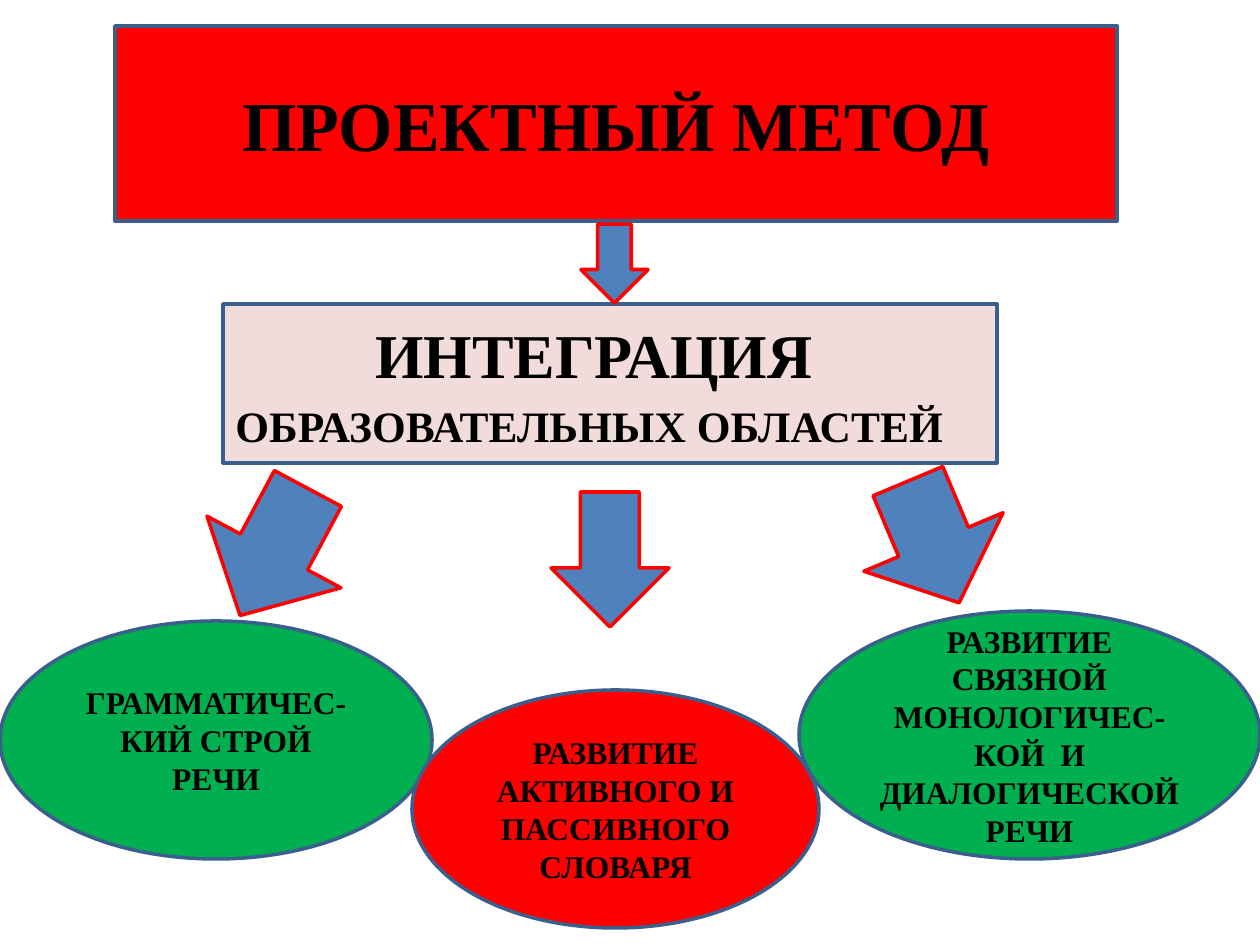
"""Build a slide showing the project method leading to three areas of speech development."""
from dataclasses import dataclass

from pptx import Presentation
from pptx.dml.color import RGBColor
from pptx.enum.shapes import MSO_SHAPE
from pptx.enum.text import MSO_ANCHOR, PP_ALIGN
from pptx.util import Emu, Pt


@dataclass(frozen=True)
class Theme:
    font: str = "Times New Roman"
    text: str = "000000"
    red: str = "FF0000"
    green: str = "00B050"
    pink: str = "F2DCDB"
    blue: str = "4F81BD"
    outline: str = "3A5F8C"
    title: float = 40
    heading: float = 35.6
    subheading: float = 24.8
    label: float = 18
    line: float = 2


T = Theme()
SLIDE = (1260, 945)
EMU_PER_PX = 914400 / 126

TITLE = ("ПРОЕКТНЫЙ МЕТОД", (115, 26, 1002, 195))
INTEGRATION_BOX = (223, 304, 774, 159)
INTEGRATION = [
    ("ИНТЕГРАЦИЯ", T.heading, 140),
    ("ОБРАЗОВАТЕЛЬНЫХ ОБЛАСТЕЙ", T.subheading, 0),
]
ARROWS = [
    ((198, 480, 152, 144), 28.1),
    ((858, 476, 151, 132), 337.2),
    ((581, 224, 67, 79), 0),
    ((551, 492, 118, 135), 0),
]
AREAS = [
    ("ГРАММАТИЧЕС-КИЙ СТРОЙ РЕЧИ", (0, 621, 432, 238), T.green),
    ("РАЗВИТИЕ СВЯЗНОЙ МОНОЛОГИЧЕС-КОЙ  И ДИАЛОГИЧЕСКОЙ РЕЧИ", (799, 611, 461, 248), T.green),
    ("РАЗВИТИЕ АКТИВНОГО И ПАССИВНОГО СЛОВАРЯ", (412, 690, 407, 238), T.red),
]


def px(n):
    return Emu(round(n * EMU_PER_PX))


def add_shape(s, kind, box, fill, line=T.outline):
    sp = s.shapes.add_shape(kind, *map(px, box))
    sp.shadow.inherit = False
    sp.fill.solid()
    sp.fill.fore_color.rgb = RGBColor.from_string(fill)
    sp.line.color.rgb = RGBColor.from_string(line)
    sp.line.width = Pt(T.line)
    sp.text_frame.word_wrap = True
    sp.text_frame.vertical_anchor = MSO_ANCHOR.MIDDLE
    return sp


def write(p, text, size, align=PP_ALIGN.CENTER):
    p.text = text
    p.alignment = align
    p.font.name = T.font
    p.font.size = Pt(size)
    p.font.bold = True
    p.font.color.rgb = RGBColor.from_string(T.text)


def add_integration(s):
    tf = add_shape(s, MSO_SHAPE.RECTANGLE, INTEGRATION_BOX, T.pink).text_frame
    for i, (text, size, indent) in enumerate(INTEGRATION):
        p = tf.add_paragraph() if i else tf.paragraphs[0]
        write(p, text, size, PP_ALIGN.LEFT)
        p.space_before = Pt(round(size * 0.2))
        p._p.get_or_add_pPr().set("marL", str(px(indent)))


def main():
    prs = Presentation()
    prs.slide_width, prs.slide_height = map(px, SLIDE)
    s = prs.slides.add_slide(prs.slide_layouts[6])

    text, box = TITLE
    sp = add_shape(s, MSO_SHAPE.RECTANGLE, box, T.red)
    write(sp.text_frame.paragraphs[0], text, T.title)
    add_integration(s)
    for box, angle in ARROWS:
        add_shape(s, MSO_SHAPE.DOWN_ARROW, box, T.blue, T.red).rotation = angle
    for text, box, fill in AREAS:
        sp = add_shape(s, MSO_SHAPE.OVAL, box, fill)
        write(sp.text_frame.paragraphs[0], text, T.label)

    prs.save("out.pptx")


if __name__ == "__main__":
    main()
